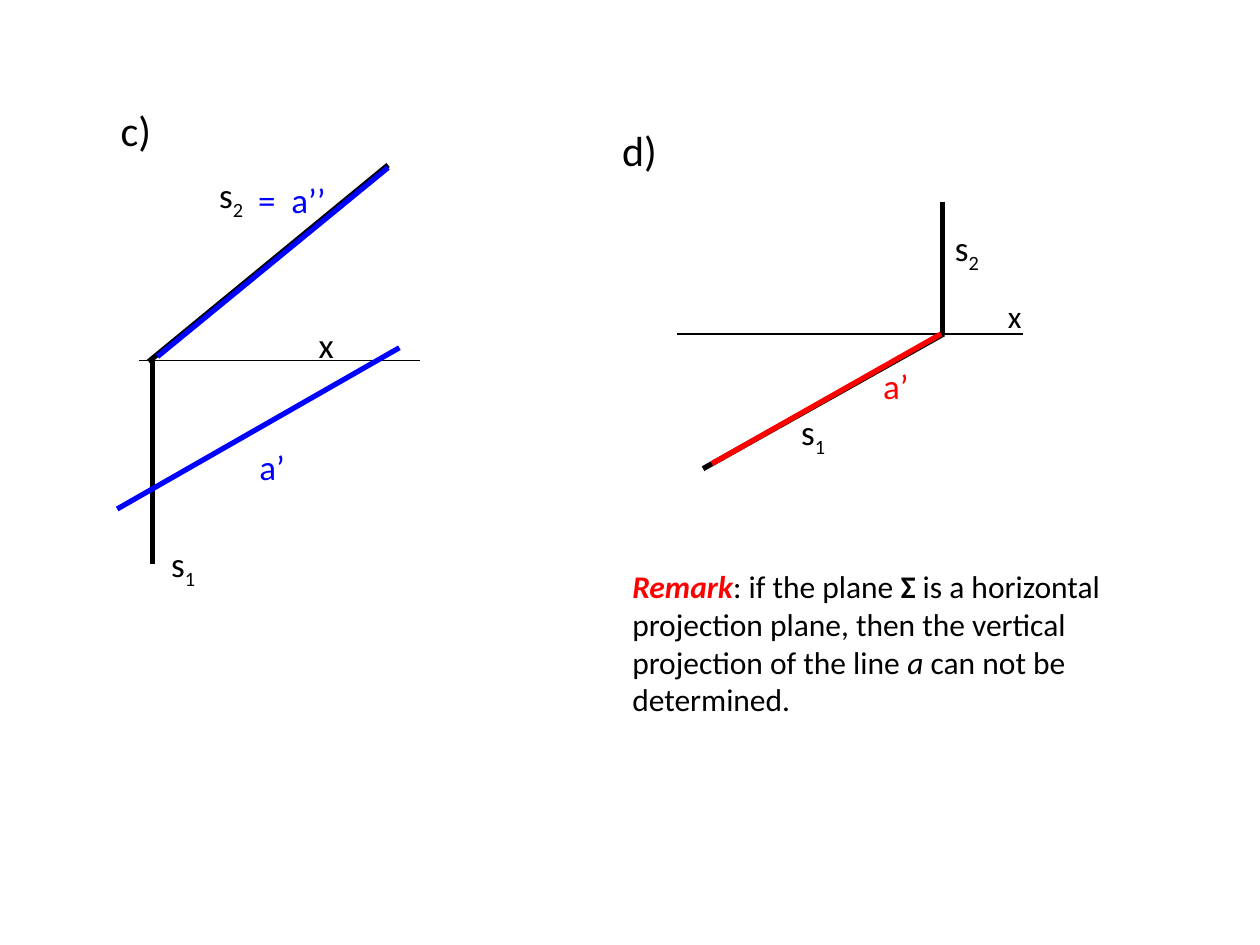
from pptx import Presentation
from pptx.dml.color import RGBColor
from pptx.enum.shapes import MSO_CONNECTOR
from pptx.enum.text import MSO_AUTO_SIZE
from pptx.oxml.ns import qn
from pptx.util import Inches, Pt
from lxml import etree

STRAIGHT = MSO_CONNECTOR.STRAIGHT
FIT = MSO_AUTO_SIZE.SHAPE_TO_FIT_TEXT
FONT = "Calibri"
BLACK, BLUE, RED = "000000", "0000FF", "FF0000"

# Text is a list of (words, marks): b bold, i italic, r red, _ subscript, w wide
S1 = [("s", ""), ("1", "_")]
S2 = [("s", ""), ("2", "_")]
A1 = [("a’", "")]
X = [("x", "")]

# Lines: start, end, colour, width. Labels: box, text, size, colour.
FIGURES = [
    {
        "lines": [
            ((1.1, 2.86), (3.33, 2.86), BLACK, 0.75),
            ((3.08, 1.31), (1.18, 2.87), BLACK, 3),
            ((1.21, 2.86), (1.21, 4.48), BLACK, 3),
            ((3.17, 2.76), (0.93, 4.04), BLUE, 3),
            ((3.08, 1.33), (1.25, 2.83), BLUE, 3),
        ],
        "labels": [
            ((0.86, 0.78, 1.18, 0.5), [("c)", "")], 24, BLACK),
            ((1.26, 4.26, 0.67, 0.43), S1, 20, BLACK),
            ((1.64, 1.33, 0.62, 0.44), S2, 20, BLACK),
            ((1.96, 3.49, 0.74, 0.43), A1, 20, BLUE),
            ((2.43, 2.52, 0.38, 0.44), X, 20, BLACK),
            ((1.95, 1.37, 0.94, 0.44),
             [("=", ""), (" ", "w"), ("a’’", "")], 20, BLUE),
        ],
    },
    {
        "lines": [
            ((5.37, 2.65), (8.12, 2.65), BLACK, 1),
            ((5.58, 3.72), (7.49, 2.65), BLACK, 3),
            ((7.48, 1.6), (7.48, 2.65), BLACK, 3),
            ((7.47, 2.65), (5.65, 3.68), RED, 3),
        ],
        "labels": [
            ((4.84, 0.94, 0.96, 0.51), [("d)", "")], 24, BLACK),
            ((6.26, 3.21, 0.55, 0.43), S1, 20, BLACK),
            ((7.48, 1.75, 0.56, 0.43), S2, 20, BLACK),
            ((7.9, 2.31, 0.37, 0.37), X, 18, BLACK),
            ((6.91, 2.84, 0.59, 0.43), A1, 20, RED),
        ],
    },
]
REMARK = [
    ("Remark", "bir"),
    (": if the plane ", ""),
    ("Σ", "b"),
    (" is a horizontal projection plane, then the vertical "
     "projection of the line ", ""),
    ("a ", "i"),
    ("can not be determined.", ""),
]


def rgb(code):
    return RGBColor.from_string(code)


def add_line(shapes, start, end, color, width):
    ends = [Inches(v) for v in start + end]
    line = shapes.add_connector(STRAIGHT, *ends)
    line.line.color.rgb = rgb(color)
    line.line.width = Pt(width)
    etree.SubElement(line._element.spPr, qn("a:effectLst"))


def add_text(shapes, box, text, size, color):
    frame = shapes.add_textbox(*[Inches(v) for v in box]).text_frame
    frame.word_wrap = True
    frame.auto_size = FIT
    para = frame.paragraphs[0]
    para.font.name = FONT
    para.font.size = Pt(size)
    para.font.color.rgb = rgb(color)
    for words, marks in text:
        run = para.add_run()
        run.text = words
        if "b" in marks:
            run.font.bold = True
        if "i" in marks:
            run.font.italic = True
        if "r" in marks:
            run.font.color.rgb = rgb(RED)
        props = run._r.get_or_add_rPr()
        if "_" in marks:
            props.set("baseline", "-25000")
        if "w" in marks:
            props.set("spc", "450")


def main():
    deck = Presentation()
    deck.slide_width, deck.slide_height = Inches(10), Inches(7.5)
    slide = deck.slides.add_slide(deck.slide_layouts[6])
    for figure in FIGURES:
        shapes = slide.shapes.add_group_shape().shapes
        for line in figure["lines"]:
            add_line(shapes, *line)
        for label in figure["labels"]:
            add_text(shapes, *label)
    add_text(slide.shapes, (4.92, 4.45, 4.57, 1.31), REMARK, 18, BLACK)
    deck.save("out.pptx")


if __name__ == "__main__":
    main()
